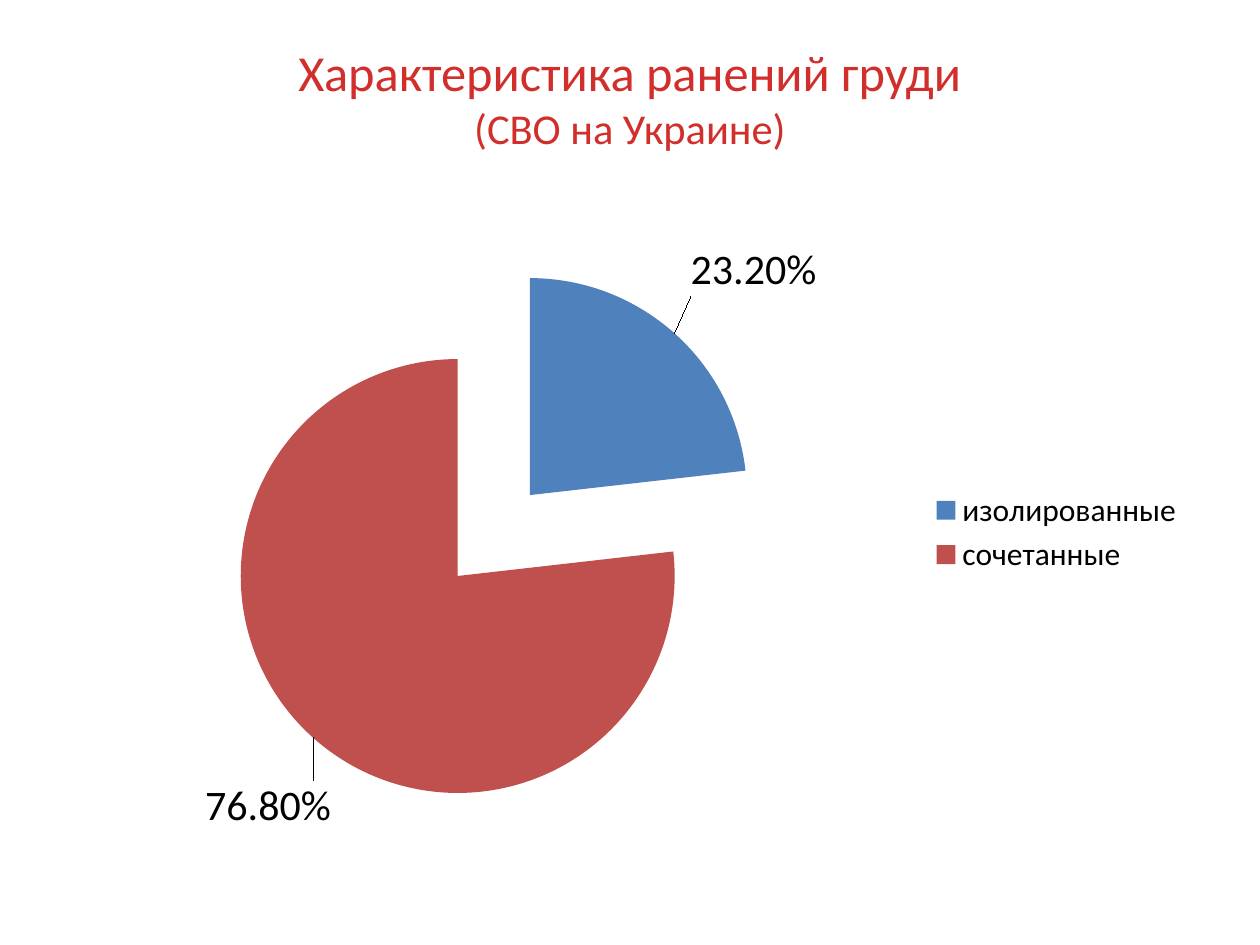
from pptx import Presentation
from pptx.chart.data import CategoryChartData
from pptx.dml.color import RGBColor
from pptx.enum import chart as ch, text
from pptx.oxml import parse_xml
from pptx.oxml.ns import nsdecls
from pptx.util import Cm, Pt

FONT = "Calibri"
COLORS = {"title": "D02F2C", "text": "000000"}
TITLE = [("Характеристика ранений груди", 28.8), ("(СВО на Украине)", 24.3)]
# category, share, fill, label shift as a fraction of the chart
SLICES = [
    ("изолированные", 0.232, "4F81BD", (0.01, -0.05)),
    ("сочетанные", 0.768, "C0504D", (0.02, 0.06)),
]
PLOT = {"x": 0.14, "y": 0.07, "w": 0.48, "h": 0.87}
EXPLOSION = 25


def rgb(name):
    return RGBColor.from_string(COLORS.get(name, name))


def layout(values, inner=False):
    """Return a c:layout element holding fractions of the chart size."""
    target = '<c:layoutTarget val="inner"/>' if inner else ""
    modes = '<c:xMode val="edge"/><c:yMode val="edge"/>' if inner else ""
    parts = "".join(f'<c:{k} val="{v}"/>' for k, v in values.items())
    return parse_xml(f'<c:layout {nsdecls("c")}><c:manualLayout>{target}{modes}'
                     f'{parts}</c:manualLayout></c:layout>')


def set_font(font, size, color):
    font.name, font.size = FONT, Pt(size)
    font.color.rgb = rgb(color)


def add_title(s):
    title = s.shapes.title
    title.left, title.top, title.width, title.height = Cm(1.27), Cm(0.76), Cm(22.86), Cm(3.18)
    tf = title.text_frame
    tf.word_wrap = True
    tf.auto_size = text.MSO_AUTO_SIZE.NONE
    tf.vertical_anchor = text.MSO_ANCHOR.MIDDLE
    tf.margin_bottom = Cm(0.91)
    p = tf.paragraphs[0]
    p.alignment = text.PP_ALIGN.CENTER
    for i, (line, size) in enumerate(TITLE):
        if i:
            p.add_line_break()
        r = p.add_run()
        r.text = line
        set_font(r.font, size, "title")


def add_pie(s):
    data = CategoryChartData(number_format="0.00%")
    data.categories = [name for name, *_ in SLICES]
    data.add_series("Series 1", [share for _, share, *_ in SLICES])
    chart = s.shapes.add_chart(ch.XL_CHART_TYPE.PIE, Cm(1.27), Cm(4.45),
                               Cm(22.86), Cm(12.57), data).chart
    set_font(chart.font, 18, "text")
    chart.has_title = False
    chart.has_legend = True
    chart.legend.position = ch.XL_LEGEND_POSITION.RIGHT
    chart.legend.include_in_layout = False

    plot = chart.plots[0]
    plot.vary_by_categories = True
    area = plot._element.getparent()
    for old in area.findall(layout({}).tag):
        area.remove(old)
    area.insert(0, layout(PLOT, inner=True))

    series = plot.series[0]
    series._element.tx.addnext(
        parse_xml(f'<c:explosion {nsdecls("c")} val="{EXPLOSION}"/>'))
    labels = series.data_labels
    labels.show_value = True
    labels.number_format, labels.number_format_is_linked = "0.00%", False
    set_font(labels.font, 24, "text")
    for i, (_, _, fill, (dx, dy)) in enumerate(SLICES):
        point = series.points[i]
        point.format.fill.solid()
        point.format.fill.fore_color.rgb = rgb(fill)
        label = point.data_label
        set_font(label.font, 24, "text")
        label.position = ch.XL_LABEL_POSITION.OUTSIDE_END
        labels._element.dLbl_lst[i].idx.addnext(layout({"x": dx, "y": dy}))


def main():
    prs = Presentation()
    prs.slide_width, prs.slide_height = Cm(25.4), Cm(19.05)
    s = prs.slides.add_slide(prs.slide_layouts[5])
    add_title(s)
    add_pie(s)
    prs.save("out.pptx")


if __name__ == "__main__":
    main()
